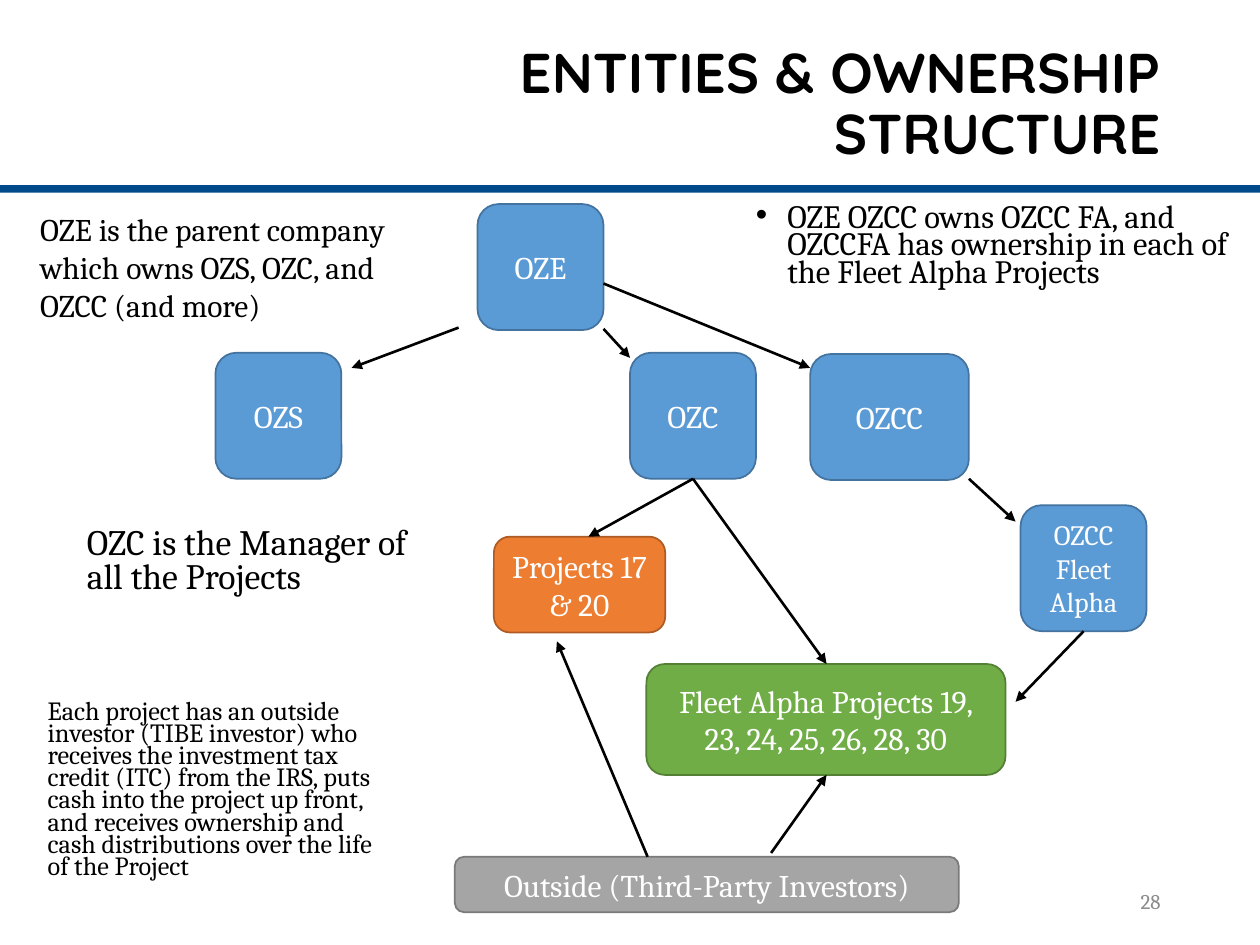
from dataclasses import dataclass

from lxml import etree
from pptx import Presentation
from pptx.dml.color import RGBColor
from pptx.enum.shapes import MSO_CONNECTOR, MSO_SHAPE
from pptx.enum.text import MSO_ANCHOR, PP_ALIGN
from pptx.oxml.ns import qn
from pptx.util import Pt

PX = 9144  # EMU in one px, 100 px to the inch

BLACK = RGBColor(0x00, 0x00, 0x00)
WHITE = RGBColor(0xFF, 0xFF, 0xFF)
GRAY = RGBColor(0x8C, 0x8C, 0x8C)
NAVY = RGBColor(0x00, 0x4A, 0x8B)

RECT, ROUND = MSO_SHAPE.RECTANGLE, MSO_SHAPE.ROUNDED_RECTANGLE
STRAIGHT = MSO_CONNECTOR.STRAIGHT
TOP, MIDDLE = MSO_ANCHOR.TOP, MSO_ANCHOR.MIDDLE
LEFT, CENTER, RIGHT = PP_ALIGN.LEFT, PP_ALIGN.CENTER, PP_ALIGN.RIGHT

Area = tuple[int, int, int, int]
Point = tuple[int, int]


@dataclass
class Tone:
    fill: RGBColor
    line: RGBColor


@dataclass
class Box:
    text: str
    area: Area
    tone: Tone
    size: float = 18


@dataclass
class Note:
    text: str
    area: Area
    size: float
    space: float = 1.0
    align: PP_ALIGN = LEFT
    anchor: MSO_ANCHOR = TOP
    color: RGBColor = BLACK
    face: str = "Cambria"
    bold: bool = False
    bullet: bool = False


@dataclass
class Arrow:
    start: Point
    end: Point


BLUE = Tone(RGBColor(0x5B, 0x9B, 0xD5), RGBColor(0x43, 0x73, 0x9E))
ORANGE = Tone(RGBColor(0xED, 0x7D, 0x31), RGBColor(0xAF, 0x5C, 0x24))
GREEN = Tone(RGBColor(0x70, 0xAD, 0x47), RGBColor(0x53, 0x80, 0x35))
SILVER = Tone(RGBColor(0xA5, 0xA5, 0xA5), RGBColor(0x7A, 0x7A, 0x7A))

NOTES = [
    Note("ENTITIES & OWNERSHIP STRUCTURE", (197, 40, 734, 88), 32, 0.9,
         RIGHT, MIDDLE, face="Quicksand", bold=True),
    Note("OZC is the Manager of all the Projects", (59, 414, 285, 76),
         20.4, 0.8),
    Note("28", (706, 695, 225, 40), 12, align=RIGHT, anchor=MIDDLE,
         color=GRAY),
    Note("OZE is the parent company which owns OZS, OZC, and OZCC (and more)",
         (22, 162, 311, 131), 18),
    Note("OZE OZCC owns OZCC FA, and OZCCFA has ownership in each of "
         "the Fleet Alpha Projects", (590, 159, 404, 100), 18.6, 0.7,
         bullet=True),
    Note("Each project has an outside investor (TIBE investor) who receives "
         "the investment tax credit (ITC) from the IRS, puts cash into the "
         "project up front, and receives ownership and cash distributions "
         "over the life of the Project", (28, 553, 285, 171), 15, 0.7),
]

BOXES = [
    Box("OZE", (379, 162, 100, 100), BLUE),
    Box("OZS", (171, 280, 100, 100), BLUE),
    Box("OZC", (500, 280, 100, 100), BLUE),
    Box("OZCC", (643, 281, 126, 100), BLUE),
    Box("OZCC Fleet Alpha", (810, 401, 100, 100), BLUE, 16),
    Box("Projects 17 & 20", (392, 426, 136, 76), ORANGE),
    Box("Fleet Alpha Projects 19, 23, 24, 25, 26, 28, 30",
        (513, 527, 285, 88), GREEN),
    Box("Outside (Third-Party Investors)", (361, 680, 400, 44), SILVER),
]

ARROWS = [
    Arrow((364, 260), (279, 292)),  # OZE to OZS
    Arrow((479, 261), (500, 284)),  # OZE to OZC
    Arrow((479, 225), (643, 292)),  # OZE to OZCC
    Arrow((769, 380), (806, 414)),  # OZCC to Fleet Alpha
    Arrow((860, 501), (806, 557)),  # Fleet Alpha to its projects
    Arrow((550, 380), (467, 426)),  # OZC to projects 17 & 20
    Arrow((550, 380), (656, 527)),  # OZC to Fleet Alpha projects
    Arrow((612, 677), (656, 615)),  # investors to Fleet Alpha projects
    Arrow((514, 680), (442, 509)),  # investors to projects 17 & 20
]


def scale(*nums: int) -> list[int]:
    return [num * PX for num in nums]


def assign(item, form: dict) -> None:
    for name, value in form.items():
        setattr(item, name, value)


def write(frame, note: Note) -> None:
    assign(frame, {"word_wrap": True, "vertical_anchor": note.anchor})
    para = frame.paragraphs[0]
    if note.bullet:
        props = para._p.get_or_add_pPr()
        props.set("marL", str(25 * PX))
        props.set("indent", str(-25 * PX))
        etree.SubElement(props, qn("a:buFont")).set("typeface", "Arial")
        etree.SubElement(props, qn("a:buChar")).set("char", "•")
    assign(para, {"alignment": note.align, "line_spacing": note.space})
    run = para.add_run()
    run.text = note.text
    assign(run.font, {"name": note.face, "size": Pt(note.size),
                      "bold": note.bold})
    run.font.color.rgb = note.color


def add_note(slide, note: Note) -> None:
    write(slide.shapes.add_textbox(*scale(*note.area)).text_frame, note)


def add_fill(slide, kind: MSO_SHAPE, area: Area, color: RGBColor):
    shape = slide.shapes.add_shape(kind, *scale(*area))
    shape.shadow.inherit = False
    shape.fill.solid()
    shape.fill.fore_color.rgb = color
    return shape


def add_box(slide, box: Box) -> None:
    shape = add_fill(slide, ROUND, box.area, box.tone.fill)
    shape.line.color.rgb = box.tone.line
    shape.line.width = Pt(1)
    write(shape.text_frame, Note(box.text, box.area, box.size, align=CENTER,
                                 anchor=MIDDLE, color=WHITE))


def add_arrow(slide, arrow: Arrow) -> None:
    link = slide.shapes.add_connector(STRAIGHT,
                                      *scale(*arrow.start, *arrow.end))
    link.line.color.rgb = BLACK
    link.line.width = Pt(1.5)
    props = link._element.spPr
    etree.SubElement(props.find(qn("a:ln")), qn("a:tailEnd")).set(
        "type", "triangle")
    etree.SubElement(props, qn("a:effectLst"))


def main() -> None:
    deck = Presentation()
    assign(deck, {"slide_width": 1000 * PX, "slide_height": 750 * PX})
    slide = deck.slides.add_slide(deck.slide_layouts[6])

    # Rule under the title
    rule = add_fill(slide, RECT, (0, 147, 1000, 6), NAVY)
    rule.line.fill.background()

    # Title, notes and slide number
    for note in NOTES:
        add_note(slide, note)

    # Ownership chart
    for box in BOXES:
        add_box(slide, box)
    for arrow in ARROWS:
        add_arrow(slide, arrow)

    deck.save("out.pptx")


if __name__ == "__main__":
    main()
